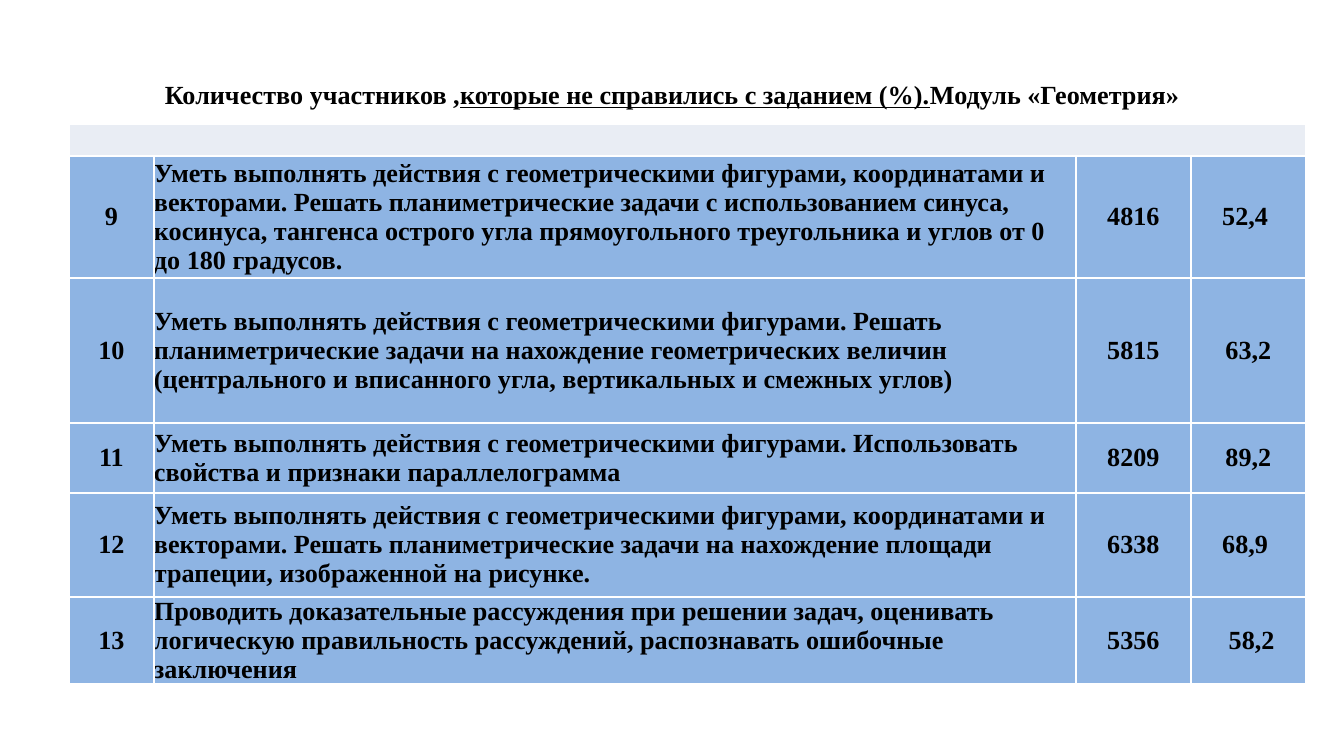
from dataclasses import dataclass

from lxml import etree
from pptx import Presentation
from pptx.dml.color import RGBColor
from pptx.enum.text import MSO_ANCHOR, PP_ALIGN
from pptx.oxml.ns import qn
from pptx.util import Emu, Pt

CENTER, LEFT = PP_ALIGN.CENTER, PP_ALIGN.LEFT
MIDDLE = MSO_ANCHOR.MIDDLE

# Content: title spans are (text, underlined)
TITLE = [
    ("Количество участников ,", False),
    ("которые не справились с заданием (%).", True),
    ("Модуль «Геометрия»", False),
]
TASKS = [
    ("9", "Уметь выполнять действия с геометрическими фигурами, координатами и векторами. "
          "Решать планиметрические задачи с использованием синуса, косинуса, тангенса острого "
          "угла прямоугольного треугольника и углов от 0 до 180 градусов.", "4816", "52,4 "),
    ("10", "Уметь выполнять действия с геометрическими фигурами. Решать планиметрические задачи "
           "на нахождение геометрических величин (центрального и вписанного угла, вертикальных "
           "и смежных углов)", "5815", "63,2"),
    ("11", "Уметь выполнять действия с геометрическими фигурами. Использовать свойства и "
           "признаки параллелограмма", "8209", "89,2"),
    ("12", "Уметь выполнять действия с геометрическими фигурами, координатами и векторами. "
           "Решать планиметрические задачи на нахождение площади трапеции, изображенной на "
           "рисунке.", "6338", "68,9 "),
    ("13", "Проводить доказательные рассуждения при решении задач, оценивать логическую "
           "правильность рассуждений, распознавать ошибочные заключения", "5356", " 58,2"),
]

# Layout in px
SLIDE = (1344, 756)
TITLE_BOX = (67, 31, 1210, 126)
TABLE_ORIGIN = (69, 124)
COLUMNS = [85, 922, 115, 115]
ROWS = [32, 122, 145, 70, 104, 87]
ALIGNMENTS = [CENTER, LEFT, CENTER, CENTER]


@dataclass(frozen=True)
class Theme:
    font: str = "Times New Roman"
    size: int = 14
    text: str = "000000"
    header: str = "E9EDF4"
    body: str = "8EB4E3"
    border: str = "FFFFFF"
    border_width: int = 1


THEME = Theme()


def px(length):
    return Emu(round(length * 914400 / 134.4))


def style_paragraph(para, alignment):
    para.alignment = alignment
    font = para.font
    font.name, font.size, font.bold = THEME.font, Pt(THEME.size), True
    font.color.rgb = RGBColor.from_string(THEME.text)


def style_cell(cell, fill, alignment):
    cell.margin_left = cell.margin_right = cell.margin_top = cell.margin_bottom = 0
    cell.vertical_anchor = MIDDLE
    style_paragraph(cell.text_frame.paragraphs[0], alignment)
    # Borders come before the fill in the cell properties
    properties = cell._tc.get_or_add_tcPr()
    for side in ("a:lnL", "a:lnR", "a:lnT", "a:lnB"):
        line = etree.SubElement(properties, qn(side), w=str(Pt(THEME.border_width)))
        solid = etree.SubElement(line, qn("a:solidFill"))
        etree.SubElement(solid, qn("a:srgbClr"), val=THEME.border)
    cell.fill.solid()
    cell.fill.fore_color.rgb = RGBColor.from_string(fill)


def add_title(page):
    title = page.shapes.title
    title.left, title.top, title.width, title.height = map(px, TITLE_BOX)
    frame = title.text_frame
    frame.vertical_anchor = MIDDLE
    para = frame.paragraphs[0]
    style_paragraph(para, CENTER)
    for text, underlined in TITLE:
        span = para.add_run()
        span.text = text
        span.font.underline = underlined


def add_task_table(page):
    left, top = TABLE_ORIGIN
    table = page.shapes.add_table(
        len(ROWS), len(COLUMNS), px(left), px(top), px(sum(COLUMNS)), px(sum(ROWS))
    ).table
    table.first_row = table.horz_banding = False
    for column, width in zip(table.columns, COLUMNS):
        column.width = px(width)
    for row, height in zip(table.rows, ROWS):
        row.height = px(height)

    # Empty band across the top
    table.cell(0, 0).merge(table.cell(0, len(COLUMNS) - 1))
    for cell in table.rows[0].cells:
        style_cell(cell, THEME.header, LEFT)
        end = etree.SubElement(cell.text_frame.paragraphs[0]._p, qn("a:endParaRPr"))
        end.set("sz", str(THEME.size * 100))

    # One row per task
    for row_index, task in enumerate(TASKS, start=1):
        for column_index, text in enumerate(task):
            cell = table.cell(row_index, column_index)
            cell.text = text
            style_cell(cell, THEME.body, ALIGNMENTS[column_index])


def main():
    deck = Presentation()
    deck.slide_width, deck.slide_height = map(px, SLIDE)
    page = deck.slides.add_slide(deck.slide_layouts[5])
    add_title(page)
    add_task_table(page)
    deck.save("out.pptx")


if __name__ == "__main__":
    main()
